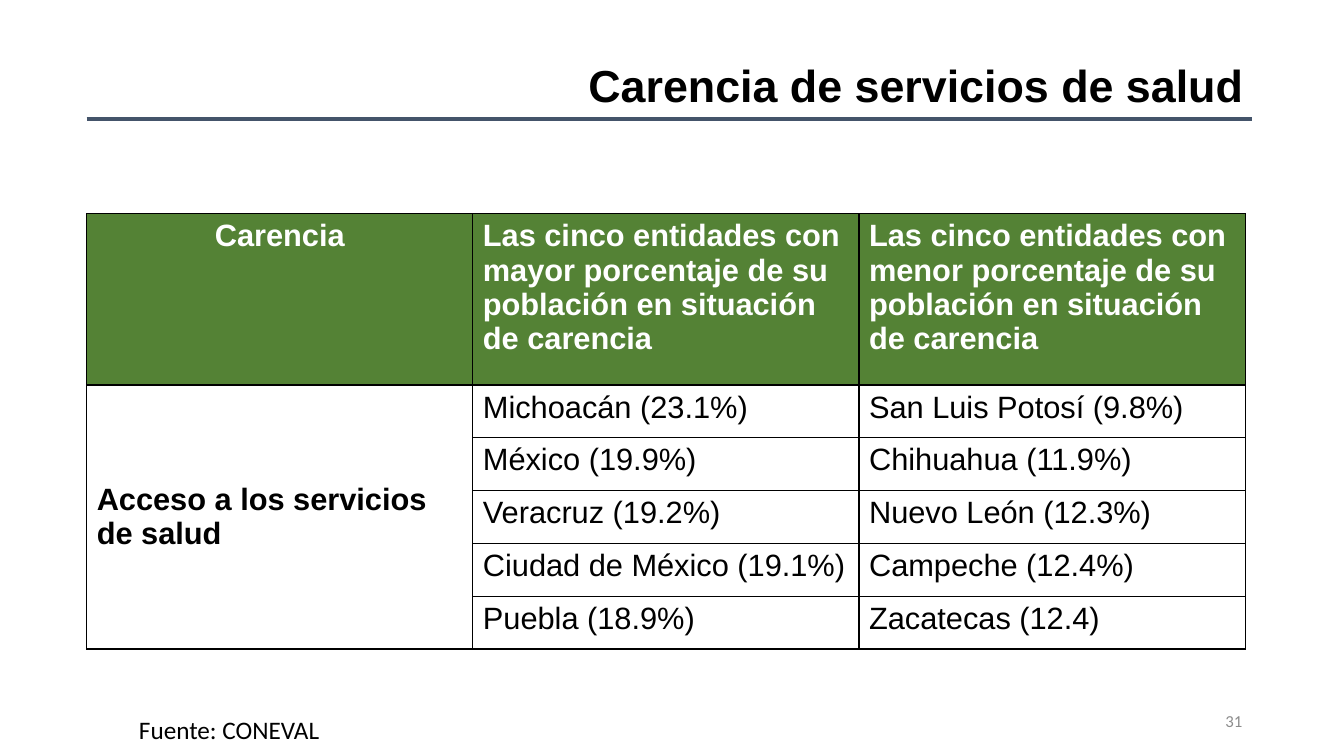
from dataclasses import dataclass
from typing import Optional

from lxml.etree import SubElement
from pptx import Presentation
from pptx.dml.color import RGBColor
from pptx.enum.shapes import MSO_CONNECTOR
from pptx.enum.text import MSO_ANCHOR as Anchor, MSO_AUTO_SIZE as AutoSize, PP_ALIGN as Align
from pptx.oxml.ns import qn
from pptx.util import Inches, Pt

BLACK = RGBColor(0x00, 0x00, 0x00)
WHITE = RGBColor(0xFF, 0xFF, 0xFF)
GREEN = RGBColor(0x54, 0x82, 0x35)
SLATE = RGBColor(0x44, 0x54, 0x6A)
GRAY = RGBColor(0x8C, 0x8C, 0x8C)

SLIDE_WIDTH, SLIDE_HEIGHT = Inches(13.33), Inches(7.5)
LEFT_MARGIN = Inches(0.86)
RULE_TOP, RULE_END = Inches(1.18), Inches(12.42)
TABLE_TOP = Inches(2.12)
COLUMN_WIDTH = Inches(3.83)
HEADER_HEIGHT, ROW_HEIGHT = Inches(1.7), Inches(0.524)

HEADERS = (
    "Carencia",
    "Las cinco entidades con mayor porcentaje de su población en situación de carencia",
    "Las cinco entidades con menor porcentaje de su población en situación de carencia",
)
TOPIC = "Acceso a los servicios de salud"
ENTITIES = (
    ("Michoacán (23.1%)", "San Luis Potosí (9.8%)"),
    ("México (19.9%)", "Chihuahua (11.9%)"),
    ("Veracruz (19.2%)", "Nuevo León (12.3%)"),
    ("Ciudad de México (19.1%)", "Campeche (12.4%)"),
    ("Puebla (18.9%)", "Zacatecas (12.4)"),
)


@dataclass(frozen=True)
class TextStyle:
    size: float
    font: str = "Arial"
    color: RGBColor = BLACK
    bold: bool = False
    align: Align = Align.LEFT
    anchor: Anchor = Anchor.TOP


@dataclass(frozen=True)
class Caption:
    text: str
    left: float
    top: float
    width: float
    height: float
    wrap: bool
    style: TextStyle


TITLE_STYLE = TextStyle(32, bold=True, align=Align.RIGHT, anchor=Anchor.MIDDLE)
HEADER_STYLE = TextStyle(22, color=WHITE, bold=True)
FIRST_HEADER_STYLE = TextStyle(22, color=WHITE, bold=True, align=Align.CENTER)
TOPIC_STYLE = TextStyle(22, bold=True, anchor=Anchor.MIDDLE)
ENTITY_STYLE = TextStyle(22)

CAPTIONS = (
    Caption("31", 9.42, 6.95, 3, 0.4, True,
            TextStyle(12, "Calibri", GRAY, align=Align.RIGHT, anchor=Anchor.MIDDLE)),
    Caption("Fuente: CONEVAL", 1.28, 7.04, 2.01, 0.4, False, TextStyle(18, "Calibri")),
)


def write_text(text_frame, text: str, style: TextStyle) -> None:
    paragraph = text_frame.paragraphs[0]
    paragraph.alignment = style.align
    run = paragraph.add_run()
    run.text = text
    run.font.name = style.font
    run.font.size = Pt(style.size)
    run.font.bold = style.bold
    run.font.color.rgb = style.color


def add_title(slide) -> None:
    title = slide.shapes.title
    title.left, title.top = Inches(0.94), Inches(0.15)
    title.width, title.height = Inches(11.5), Inches(1.45)
    text_frame = title.text_frame
    text_frame.auto_size = AutoSize.NONE
    text_frame.vertical_anchor = TITLE_STYLE.anchor
    write_text(text_frame, "Carencia de servicios de salud", TITLE_STYLE)
    text_frame.paragraphs[0].line_spacing = 0.9


def add_rule(slide) -> None:
    rule = slide.shapes.add_connector(
        MSO_CONNECTOR.STRAIGHT, LEFT_MARGIN, RULE_TOP, RULE_END, RULE_TOP)
    rule.line.color.rgb = SLATE
    rule.line.width = Pt(3)
    SubElement(rule._element.spPr, qn("a:effectLst"))


def add_caption(slide, caption: Caption) -> None:
    box = slide.shapes.add_textbox(
        Inches(caption.left), Inches(caption.top), Inches(caption.width), Inches(caption.height))
    text_frame = box.text_frame
    text_frame.word_wrap = caption.wrap
    text_frame.auto_size = AutoSize.NONE if caption.wrap else AutoSize.SHAPE_TO_FIT_TEXT
    text_frame.vertical_anchor = caption.style.anchor
    write_text(text_frame, caption.text, caption.style)


def format_cell(cell, fill: Optional[RGBColor]) -> None:
    """Draw the four borders, then set the fill, or none."""
    properties = cell._tc.get_or_add_tcPr()
    for side in ("a:lnL", "a:lnR", "a:lnT", "a:lnB"):
        border = SubElement(properties, qn(side), w=str(Pt(1)))
        solid = SubElement(border, qn("a:solidFill"))
        SubElement(solid, qn("a:srgbClr"), val=str(BLACK))
    if fill is None:
        cell.fill.background()
    else:
        cell.fill.solid()
        cell.fill.fore_color.rgb = fill


def write_cell(cell, text: str, style: TextStyle) -> None:
    cell.vertical_anchor = style.anchor
    write_text(cell.text_frame, text, style)


def add_entity_table(slide) -> None:
    row_count, column_count = len(ENTITIES) + 1, len(HEADERS)
    table = slide.shapes.add_table(
        row_count, column_count, LEFT_MARGIN, TABLE_TOP, COLUMN_WIDTH * column_count,
        HEADER_HEIGHT + ROW_HEIGHT * len(ENTITIES)).table
    table.horz_banding = False
    for column in table.columns:
        column.width = COLUMN_WIDTH
    for row_index, row in enumerate(table.rows):
        row.height = ROW_HEIGHT if row_index else HEADER_HEIGHT
        for cell in row.cells:
            format_cell(cell, None if row_index else GREEN)

    for column_index, header in enumerate(HEADERS):
        style = HEADER_STYLE if column_index else FIRST_HEADER_STYLE
        write_cell(table.cell(0, column_index), header, style)
    table.cell(1, 0).merge(table.cell(row_count - 1, 0))
    write_cell(table.cell(1, 0), TOPIC, TOPIC_STYLE)
    for row_index, entities in enumerate(ENTITIES, start=1):
        for column_index, entity in enumerate(entities, start=1):
            write_cell(table.cell(row_index, column_index), entity, ENTITY_STYLE)


def main() -> None:
    presentation = Presentation()
    presentation.slide_width, presentation.slide_height = SLIDE_WIDTH, SLIDE_HEIGHT
    title_only = presentation.slide_layouts.get_by_name("Title Only")
    slide = presentation.slides.add_slide(title_only)
    add_title(slide)
    add_rule(slide)
    add_entity_table(slide)
    for caption in CAPTIONS:
        add_caption(slide, caption)
    presentation.save("out.pptx")


if __name__ == "__main__":
    main()
